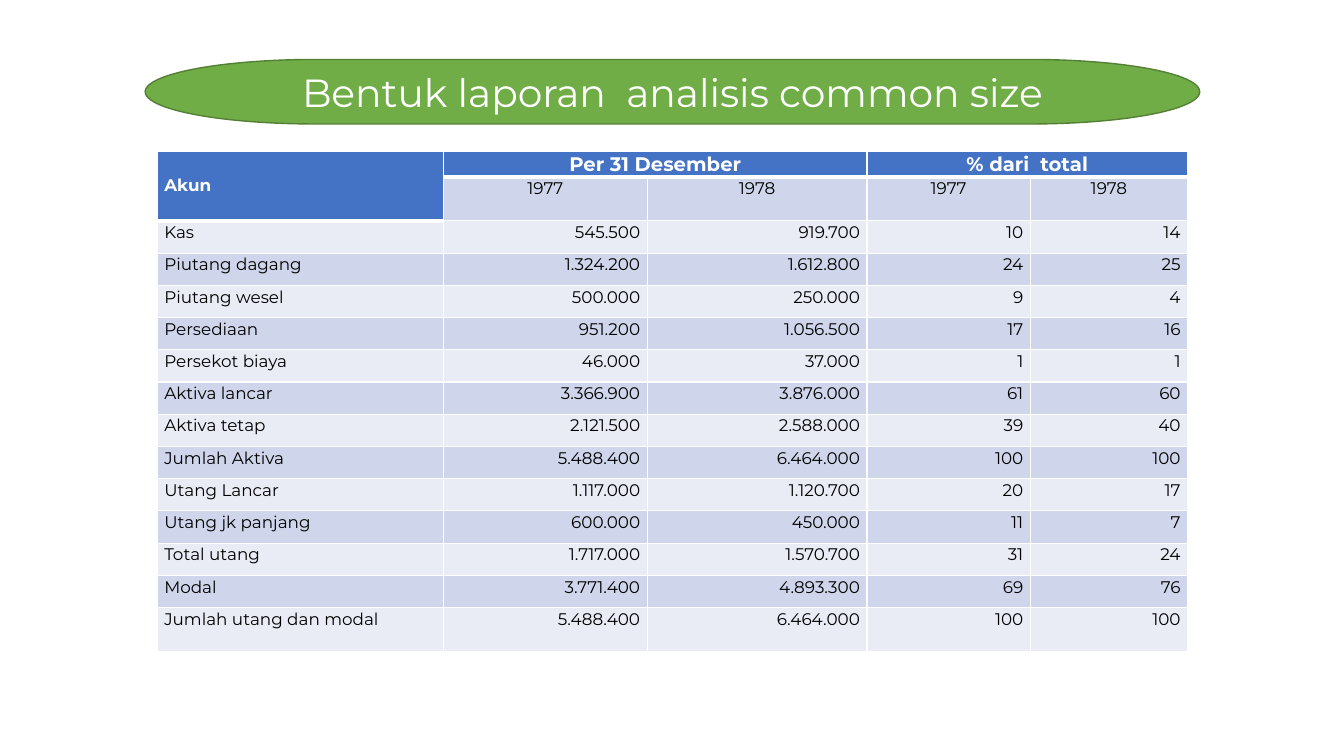
from lxml import etree
from pptx import Presentation
from pptx import util as u
from pptx.dml.color import RGBColor
from pptx.enum import shapes, text
from pptx.oxml import ns

C = {"green": "70AD47", "edge": "538035", "head": "4472C4", "odd": "CFD5EA",
     "even": "E9EBF5", "white": "FFFFFF", "black": "000000"}
AL = text.PP_ALIGN


def write(tf, words, size, color, align, bold=False):
    p = tf.paragraphs[0]
    p.alignment = align
    r = p.add_run()
    r.text = words
    for k, v in {"name": "Montserrat", "size": u.Pt(size), "bold": bold}.items():
        setattr(r.font, k, v)
    r.font.color.rgb = RGBColor.from_string(C[color])
    return p


def border(cell, side, width):
    ln = etree.SubElement(cell._tc.get_or_add_tcPr(), ns.qn("a:ln" + side), w=str(u.Pt(width)))
    fill = etree.SubElement(ln, ns.qn("a:solidFill"))
    etree.SubElement(fill, ns.qn("a:srgbClr"), val=C["white"])


prs = Presentation()
prs.slide_width, prs.slide_height = u.Inches(13.33), u.Inches(7.5)
s = prs.slides.add_slide(prs.slide_layouts[6])

# Title
sp = s.shapes.add_shape(shapes.MSO_SHAPE.FLOWCHART_TERMINATOR,
                        *map(u.Inches, (1.44, 0.59, 10.46, 0.64)))
sp.shadow.inherit = False
sp.fill.solid()
sp.fill.fore_color.rgb = RGBColor.from_string(C["green"])
sp.line.color.rgb = RGBColor.from_string(C["edge"])
sp.line.width = u.Pt(1)
sp.text_frame.vertical_anchor = text.MSO_ANCHOR.MIDDLE
write(sp.text_frame, "Bentuk laporan  analisis common size", 28, "white", AL.CENTER)

# Table contents
rows = [
    ("Akun", "Per 31 Desember", "", "% dari  total", ""),
    ("", "1977", "1978", "1977", "1978"),
    ("Kas", "545.500", "919.700", "10", "14"),
    ("Piutang dagang", "1.324.200", "1.612.800", "24", "25"),
    ("Piutang wesel", "500.000", "250.000", "9", "4"),
    ("Persediaan", "951.200", "1.056.500", "17", "16"),
    ("Persekot biaya", "46.000", "37.000", "1", "1"),
    ("Aktiva lancar", "3.366.900", "3.876.000", "61", "60"),
    ("Aktiva tetap", "2.121.500", "2.588.000", "39", "40"),
    ("Jumlah Aktiva", "5.488.400", "6.464.000", "100", "100"),
    ("Utang Lancar", "1.117.000", "1.120.700", "20", "17"),
    ("Utang jk panjang", "600.000", "450.000", "11", "7"),
    ("Total utang", "1.717.000", "1.570.700", "31", "24"),
    ("Modal", "3.771.400", "4.893.300", "69", "76"),
    ("Jumlah utang dan modal", "5.488.400", "6.464.000", "100", "100"),
]
widths = [2.84, 2.02, 2.18, 1.62, 1.56]
heights = [0.2] + [0.32] * (len(rows) - 2) + [0.44]

# Table grid
tbl = s.shapes.add_table(len(rows), len(widths), u.Inches(1.56), u.Inches(1.5),
                         u.Inches(sum(widths)), u.Inches(sum(heights))).table
for col, w in zip(tbl.columns, widths):
    col.width = u.Inches(w)
for row, h in zip(tbl.rows, heights):
    row.height = u.Inches(h)
for first, last in (((0, 0), (1, 0)), ((0, 1), (0, 2)), ((0, 3), (0, 4))):
    tbl.cell(*first).merge(tbl.cell(*last))

# Cells
for i, row in enumerate(rows):
    for j, words in enumerate(row):
        cell = tbl.cell(i, j)
        head = i == 0 or (i, j) == (1, 0)
        under_head = i == (2 if j == 0 else 1)
        for k, v in {"left": 0.07, "right": 0.07, "bottom": 0,
                     "top": 0.22 if words == "Akun" else 0}.items():
            setattr(cell, "margin_" + k, u.Inches(v))
        for side, thick in (("L", False), ("R", False), ("T", under_head), ("B", head)):
            border(cell, side, 3 if thick else 1)
        cell.fill.solid()
        cell.fill.fore_color.rgb = RGBColor.from_string(
            C["head" if head else "odd" if i % 2 else "even"])
        if words:
            align = AL.LEFT if j == 0 else AL.CENTER if i < 2 else AL.RIGHT
            p = write(cell.text_frame, words, 14 if head and j else 12,
                      "white" if head else "black", align, head)
            p.line_spacing = 1.07

prs.save("out.pptx")
